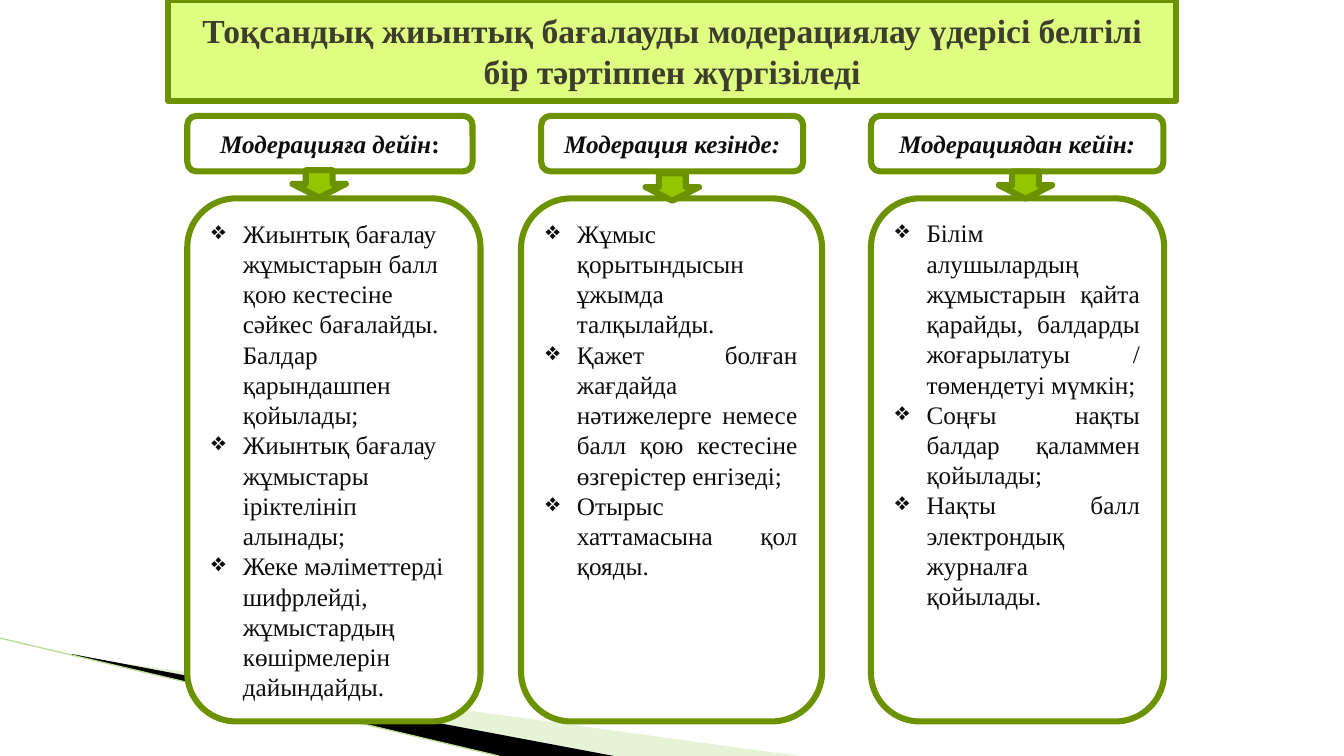
from dataclasses import dataclass

import pptx
import pptx.dml.color
import pptx.enum.shapes
import pptx.enum.text
import pptx.oxml
import pptx.oxml.ns
import pptx.util
from pptx.util import Cm, Pt

ANCHOR = pptx.enum.text.MSO_ANCHOR
ALIGN = pptx.enum.text.PP_ALIGN
PRESET = pptx.enum.shapes.MSO_SHAPE


@dataclass(frozen=True)
class Theme:
    font: str = "Times New Roman"
    title_size: float = 24
    text_size: float = 18
    outline_width: float = 4.33
    white: str = "FFFFFF"
    title_fill: str = "DFFF82"
    title_text: str = "3E3D2D"
    text: str = "0D0D0D"
    outline: str = "6D9200"
    arrow: str = "94C600"
    pale_wedge: str = "C3E19D"
    dark_wedge: str = "000000"
    thin_line: str = "BDDC94"


@dataclass(frozen=True)
class Box:
    left: float
    top: float
    width: float
    height: float

    def lengths(self) -> tuple:
        return Cm(self.left), Cm(self.top), Cm(self.width), Cm(self.height)


@dataclass(frozen=True)
class Stage:
    heading: str
    heading_box: Box
    arrow_top: float
    card_box: Box
    anchor: ANCHOR
    align: ALIGN
    items: tuple[str, ...]


@dataclass(frozen=True)
class Wedge:
    points: tuple[tuple[float, float], ...]
    color: str
    opacity: int


THEME = Theme()
SLIDE_WIDTH, SLIDE_HEIGHT = 33.87, 19.05
HEADING_TOP, HEADING_HEIGHT = 2.92, 1.4
CARD_TOP, CARD_HEIGHT = 5.0, 13.18
ARROW_LEFT, ARROW_STEP = 7.37, 8.9
ARROW_WIDTH, ARROW_HEIGHT = 1.35, 0.69
BULLET_INDENT = 0.79

TITLE = "Тоқсандық жиынтық бағалауды модерациялау үдерісі белгілі бір тәртіппен жүргізіледі"
TITLE_BOX = Box(4.24, 0, 25.4, 2.54)

STAGES = (
    Stage(
        "Модерацияға дейін:", Box(4.72, HEADING_TOP, 7.19, HEADING_HEIGHT), 4.29,
        Box(4.72, CARD_TOP, 7.39, CARD_HEIGHT), ANCHOR.MIDDLE, ALIGN.LEFT,
        ("Жиынтық бағалау жұмыстарын балл қою кестесіне сәйкес бағалайды. "
         "Балдар қарындашпен қойылады;",
         "Жиынтық бағалау жұмыстары іріктелініп алынады;",
         "Жеке мәліметтерді шифрлейді, жұмыстардың көшірмелерін дайындайды."),
    ),
    Stage(
        "Модерация кезінде:", Box(13.64, HEADING_TOP, 6.6, HEADING_HEIGHT), 4.37,
        Box(13.13, CARD_TOP, 7.59, CARD_HEIGHT), ANCHOR.TOP, ALIGN.JUSTIFY,
        ("Жұмыс қорытындысын ұжымда талқылайды.",
         "Қажет болған жағдайда нәтижелерге немесе балл қою кестесіне "
         "өзгерістер енгізеді;",
         "Отырыс хаттамасына қол қояды."),
    ),
    Stage(
        "Модерациядан кейін:", Box(21.95, HEADING_TOP, 7.37, HEADING_HEIGHT), 4.32,
        Box(21.95, CARD_TOP, 7.39, CARD_HEIGHT), ANCHOR.TOP, ALIGN.JUSTIFY,
        ("Білім алушылардың жұмыстарын қайта қарайды, балдарды жоғарылатуы / "
         "төмендетуі мүмкін;",
         "Соңғы нақты балдар қаламмен қойылады;",
         "Нақты балл электрондық журналға қойылады."),
    ),
)

WEDGES = (
    Wedge(((1.85, 16.54), (20.14, 19.05), (15.44, 19.05), (1.85, 16.51)),
          THEME.pale_wedge, 40),
    Wedge(((1.8, 16.48), (15.47, 19.05), (12.6, 19.05), (1.83, 16.51)),
          THEME.dark_wedge, 100),
)


def rgb(color: str) -> pptx.dml.color.RGBColor:
    return pptx.dml.color.RGBColor.from_string(color)


def add_element(parent, tag: str, **attributes: str):
    element = pptx.oxml.ns.qn(tag)
    child = parent.makeelement(element, attributes)
    parent.append(child)
    return child


def paint(shape, fill: str) -> None:
    shape.fill.solid()
    shape.fill.fore_color.rgb = rgb(fill)
    shape.line.color.rgb = rgb(THEME.outline)
    shape.line.width = Pt(THEME.outline_width)


def add_preset(slide, preset: PRESET, box: Box, fill: str):
    shape = slide.shapes.add_shape(preset, *box.lengths())
    shape.shadow.inherit = False
    paint(shape, fill)
    return shape


def set_font(font, size: float, color: str, bold: bool = False) -> None:
    font.name = THEME.font
    font.size = Pt(size)
    font.bold = bold
    font.color.rgb = rgb(color)


def add_wedge(slide, wedge: Wedge) -> None:
    points = [(Cm(x), Cm(y)) for x, y in wedge.points]
    builder = slide.shapes.build_freeform(*points[0])
    builder.add_line_segments(points[1:], close=True)
    shape = builder.convert_to_shape()
    shape.shadow.inherit = False
    shape.fill.solid()
    shape.fill.fore_color.rgb = rgb(wedge.color)
    shape.line.fill.background()
    if wedge.opacity < 100:
        color = shape.fill._xPr.find(".//" + pptx.oxml.ns.qn("a:srgbClr"))
        add_element(color, "a:alpha", val=str(wedge.opacity * 1000))


def add_thin_line(slide) -> None:
    line = slide.shapes.add_connector(
        pptx.enum.shapes.MSO_CONNECTOR.STRAIGHT,
        Cm(0), Cm(16.08), Cm(12.57), Cm(SLIDE_HEIGHT))
    line.line.color.rgb = rgb(THEME.thin_line)
    line.line.width = Pt(0.95)
    add_element(line._element.spPr, "a:effectLst")


def format_title(title) -> None:
    title.left, title.top, title.width, title.height = TITLE_BOX.lengths()
    geometry = add_element(title._element.spPr, "a:prstGeom", prst="roundRect")
    add_element(geometry, "a:avLst")
    paint(title, THEME.title_fill)
    frame = title.text_frame
    frame.text = TITLE
    frame.word_wrap = True
    frame.auto_size = pptx.enum.text.MSO_AUTO_SIZE.NONE
    frame.vertical_anchor = ANCHOR.MIDDLE
    paragraph = frame.paragraphs[0]
    paragraph.alignment = ALIGN.CENTER
    set_font(paragraph.font, THEME.title_size, THEME.title_text, bold=True)


def add_card(slide, stage: Stage) -> None:
    card = add_preset(slide, PRESET.ROUNDED_RECTANGLE, stage.card_box, THEME.white)
    frame = card.text_frame
    frame.word_wrap = True
    frame.vertical_anchor = stage.anchor
    for index, item in enumerate(stage.items):
        paragraph = frame.add_paragraph() if index else frame.paragraphs[0]
        paragraph.text = item
        paragraph.alignment = stage.align
        properties = paragraph._p.get_or_add_pPr()
        properties.set("marL", str(Cm(BULLET_INDENT)))
        properties.set("indent", str(-Cm(BULLET_INDENT)))
        add_element(properties, "a:buChar", char="❖")
        set_font(paragraph.font, THEME.text_size, THEME.text)


def add_heading(slide, stage: Stage) -> None:
    """Draw the stage name; only the first stage has an upright colon."""
    heading = add_preset(slide, PRESET.ROUNDED_RECTANGLE, stage.heading_box, THEME.white)
    frame = heading.text_frame
    frame.word_wrap = True
    frame.vertical_anchor = ANCHOR.MIDDLE
    paragraph = frame.paragraphs[0]
    paragraph.alignment = ALIGN.CENTER
    set_font(paragraph.font, THEME.text_size, THEME.text, bold=True)
    if stage is STAGES[0]:
        parts = ((stage.heading[:-1], True), (stage.heading[-1], False))
    else:
        parts = ((stage.heading, True),)
    for text, italic in parts:
        run = paragraph.add_run()
        run.text = text
        run.font.italic = italic


def main() -> None:
    presentation = pptx.Presentation()
    presentation.slide_width = Cm(SLIDE_WIDTH)
    presentation.slide_height = Cm(SLIDE_HEIGHT)
    slide = presentation.slides.add_slide(presentation.slide_layouts[5])
    format_title(slide.shapes.title)
    for wedge in WEDGES:
        add_wedge(slide, wedge)
    add_thin_line(slide)
    for index, stage in enumerate(STAGES):
        add_card(slide, stage)
        add_heading(slide, stage)
        arrow_box = Box(ARROW_LEFT + index * ARROW_STEP, stage.arrow_top,
                        ARROW_WIDTH, ARROW_HEIGHT)
        add_preset(slide, PRESET.DOWN_ARROW, arrow_box, THEME.arrow)
    presentation.save("out.pptx")


if __name__ == "__main__":
    main()
